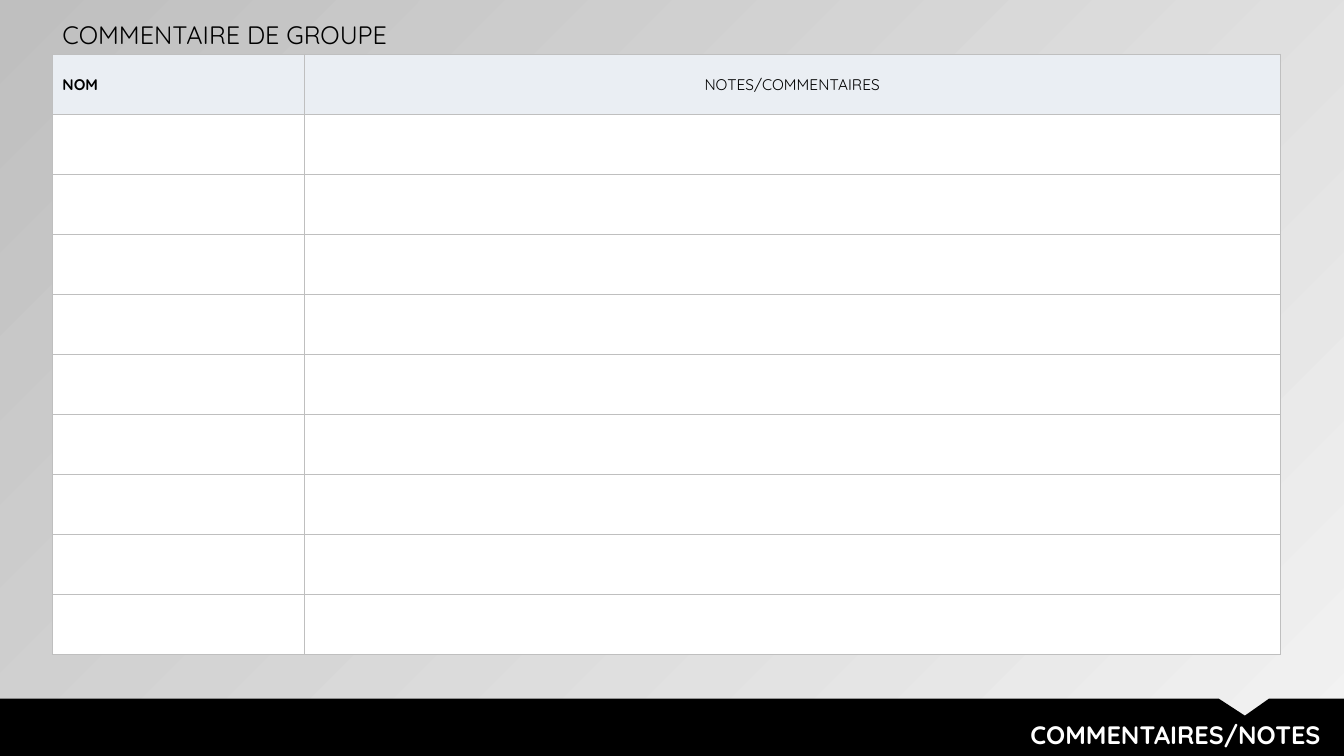
from lxml.etree import SubElement
from pptx import Presentation
from pptx.dml.color import RGBColor
from pptx.enum.text import MSO_ANCHOR as Anchor, MSO_AUTO_SIZE as AutoSize, PP_ALIGN as Align
from pptx.oxml.ns import qn
from pptx.util import Pt

WIDTH, HEIGHT = 960, 540
FONT = "Quicksand"
COLORS = {
    "black": "000000",
    "white": "FFFFFF",
    "header": "EAEEF3",
    "border": "BFBFBF",
    "light": "F2F2F2",
    "grey": "BFBFBF",
}

TITLE = {"text": "COMMENTAIRE DE GROUPE", "at": (37.4, 10, 320, 28.8)}
FOOTER = {"text": "COMMENTAIRES/NOTES", "at": (298, 510, 652.3, 28.8)}
HEADERS = [
    {"text": "NOM", "bold": True},
    {"text": "NOTES/COMMENTAIRES", "align": Align.CENTER},
]
TABLE_LEFT, TABLE_TOP = 37.4, 38.9
COLUMN_WIDTHS = [180, 697]
ROW_COUNT, ROW_HEIGHT = 10, 42.9
BAND_TOP = 499
NOTCH = [(870.5, BAND_TOP), (889.2, 511.2), (906.5, BAND_TOP)]


def color(name):
    return RGBColor.from_string(COLORS[name])


def write(frame, text, size=18, ink="black", bold=False, align=Align.LEFT, anchor=Anchor.TOP):
    frame.word_wrap = True
    frame.vertical_anchor = anchor
    para = frame.paragraphs[0]
    para.alignment = align
    para.line_spacing = 1.0
    span = para.add_run()
    span.text = text
    span.font.name = FONT
    span.font.size = Pt(size)
    span.font.bold = bold
    span.font.color.rgb = color(ink)


def fill_cell(cell, fill):
    """Give the cell a plain fill and a thin line on all four sides."""
    props = cell._tc.get_or_add_tcPr()
    for side in ("lnL", "lnR", "lnT", "lnB"):
        line = SubElement(props, qn(f"a:{side}"), w=str(Pt(1)))
        solid = SubElement(line, qn("a:solidFill"))
        SubElement(solid, qn("a:srgbClr"), val=COLORS["border"])
    cell.fill.solid()
    cell.fill.fore_color.rgb = color(fill)


def paint_background(page):
    fill = page.background.fill
    fill.gradient()
    fill.gradient_angle = 135
    for stop, position, name in zip(fill.gradient_stops, (0, 1), ("light", "grey")):
        stop.position = position
        stop.color.rgb = color(name)


def add_notes_table(page):
    frame = page.shapes.add_table(
        ROW_COUNT, len(COLUMN_WIDTHS), Pt(TABLE_LEFT), Pt(TABLE_TOP),
        Pt(sum(COLUMN_WIDTHS)), Pt(ROW_COUNT * ROW_HEIGHT))
    table = frame.table
    table.horz_banding = False
    for column, width in zip(table.columns, COLUMN_WIDTHS):
        column.width = Pt(width)
    for index, row in enumerate(table.rows):
        row.height = Pt(ROW_HEIGHT)
        for cell in row.cells:
            fill_cell(cell, "white" if index else "header")
    for cell, header in zip(table.rows[0].cells, HEADERS):
        cell.margin_top = cell.margin_bottom = 0
        write(cell.text_frame, size=11, **header)
        cell.vertical_anchor = Anchor.MIDDLE


def add_band(page):
    corners = [*NOTCH, (WIDTH, BAND_TOP), (WIDTH, HEIGHT), (0, HEIGHT)]
    outline = page.shapes.build_freeform(0, Pt(BAND_TOP))
    outline.add_line_segments([(Pt(x), Pt(y)) for x, y in corners], close=True)
    band = outline.convert_to_shape()
    band.shadow.inherit = False
    band.fill.solid()
    band.fill.fore_color.rgb = color("black")
    band.line.fill.background()


def main():
    deck = Presentation()
    deck.slide_width, deck.slide_height = Pt(WIDTH), Pt(HEIGHT)
    page = deck.slides.add_slide(deck.slide_layouts[5])
    paint_background(page)
    add_notes_table(page)
    add_band(page)

    title = page.shapes.title
    title.left, title.top, title.width, title.height = map(Pt, TITLE["at"])
    title.text_frame.auto_size = AutoSize.NONE
    write(title.text_frame, TITLE["text"])

    footer = page.shapes.add_textbox(*map(Pt, FOOTER["at"]))
    write(footer.text_frame, FOOTER["text"], ink="white", bold=True, align=Align.RIGHT)

    deck.save("out.pptx")


if __name__ == "__main__":
    main()
